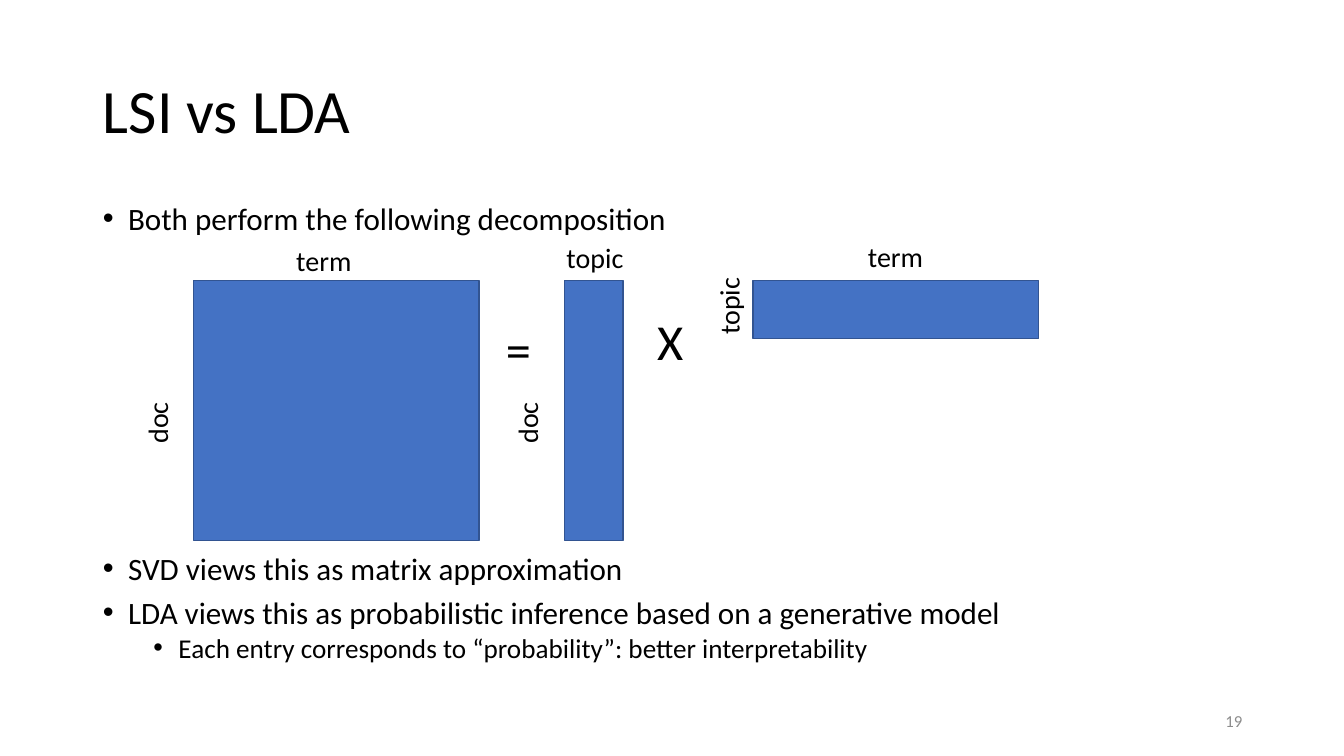
"""Build the slide comparing LSI and LDA as matrix decompositions."""
from lxml.etree import SubElement
from pptx import Presentation
from pptx.dml.color import RGBColor as Rgb
from pptx.enum.shapes import MSO_SHAPE as Shape
from pptx.enum.text import MSO_ANCHOR as Anchor, MSO_AUTO_SIZE as Fit, PP_ALIGN as Align
from pptx.oxml.ns import qn
from pptx.util import Inches, Pt

COLORS = {"text": "000000", "fill": "4472C4", "edge": "325491", "page": "8C8C8C"}


def style(para, size, color="text"):
    para.font.name = "Calibri"
    para.font.size = Pt(size)
    para.font.color.rgb = Rgb.from_string(COLORS[color])


def place(shape, *box):
    shape.left, shape.top, shape.width, shape.height = map(Inches, box)


deck = Presentation()
deck.slide_width, deck.slide_height = Inches(13.33), Inches(7.5)
slide = deck.slides.add_slide(deck.slide_layouts[1])
title, body = slide.placeholders

place(title, 0.92, 0.4, 11.5, 1.45)
frame = title.text_frame
frame.text = "LSI vs LDA"
frame.vertical_anchor = Anchor.MIDDLE
frame.auto_size = Fit.NONE
para = frame.paragraphs[0]
para.alignment = Align.LEFT
para.line_spacing = 0.9
style(para, 44)

place(body, 0.92, 2, 11.5, 4.76)
points = [
    ("Both perform the following decomposition", 0, 22.2, 10),
    ("SVD views this as matrix approximation", 0, 22.2, 229),
    ("LDA views this as probabilistic inference based on a generative model", 0, 22.2, 10),
    ("Each entry corresponds to “probability”: better interpretability", 1, 19.4, 5),
]
frame = body.text_frame
frame.text = "\n".join(point[0] for point in points)
frame.auto_size = Fit.NONE
for para, (_, level, size, gap) in zip(frame.paragraphs, points):
    para.level = level
    para.line_spacing = 0.8
    para.space_before = Pt(gap)
    props = para._p.get_or_add_pPr()
    props.set("marL", str(Inches(0.25 + 0.5 * level)))
    props.set("indent", str(Inches(-0.25)))
    SubElement(props, qn("a:buFont")).set("typeface", "Arial")
    SubElement(props, qn("a:buChar")).set("char", "•")
    style(para, size)

top, long, tall, thin = 2.78, 2.83, 2.58, 0.58
for left, width, height in [(1.92, long, tall), (5.6, thin, tall), (7.47, long, thin)]:
    matrix = slide.shapes.add_shape(
        Shape.RECTANGLE, Inches(left), Inches(top), Inches(width), Inches(height))
    matrix.shadow.inherit = False
    matrix.fill.solid()
    matrix.fill.fore_color.rgb = Rgb.from_string(COLORS["fill"])
    matrix.line.color.rgb = Rgb.from_string(COLORS["edge"])
    matrix.line.width = Pt(1)

labels = [
    ("doc", 1.34, 3.99, 0.54, 0.51, 20, True),
    ("doc", 5.01, 3.99, 0.54, 0.51, 20, True),
    ("topic", 7.01, 2.75, 0.54, 0.67, 20, True),
    ("term", 2.84, 2.37, 0.76, 0.44, 20, False),
    ("term", 8.51, 2.33, 0.76, 0.44, 20, False),
    ("=", 4.92, 3.11, 0.5, 0.71, 36, False),
    ("X", 6.42, 3.03, 0.58, 0.71, 36, False),
    ("topic", 5.52, 2.34, 0.77, 0.44, 20, False),
]
for text, left, top, width, height, size, turned in labels:
    label = slide.shapes.add_textbox(
        Inches(left), Inches(top), Inches(width), Inches(height))
    frame = label.text_frame
    frame.text = text
    frame.word_wrap = text == "X"
    frame.auto_size = Fit.SHAPE_TO_FIT_TEXT
    if turned:
        label.element.txBody.bodyPr.set("vert", "vert270")
    style(frame.paragraphs[0], size)

page = slide.shapes.add_textbox(Inches(9.42), Inches(6.95), Inches(3), Inches(0.4))
frame = page.text_frame
frame.text = "19"
frame.word_wrap = True
frame.vertical_anchor = Anchor.MIDDLE
frame.paragraphs[0].alignment = Align.RIGHT
style(frame.paragraphs[0], 12, "page")

deck.save("out.pptx")
